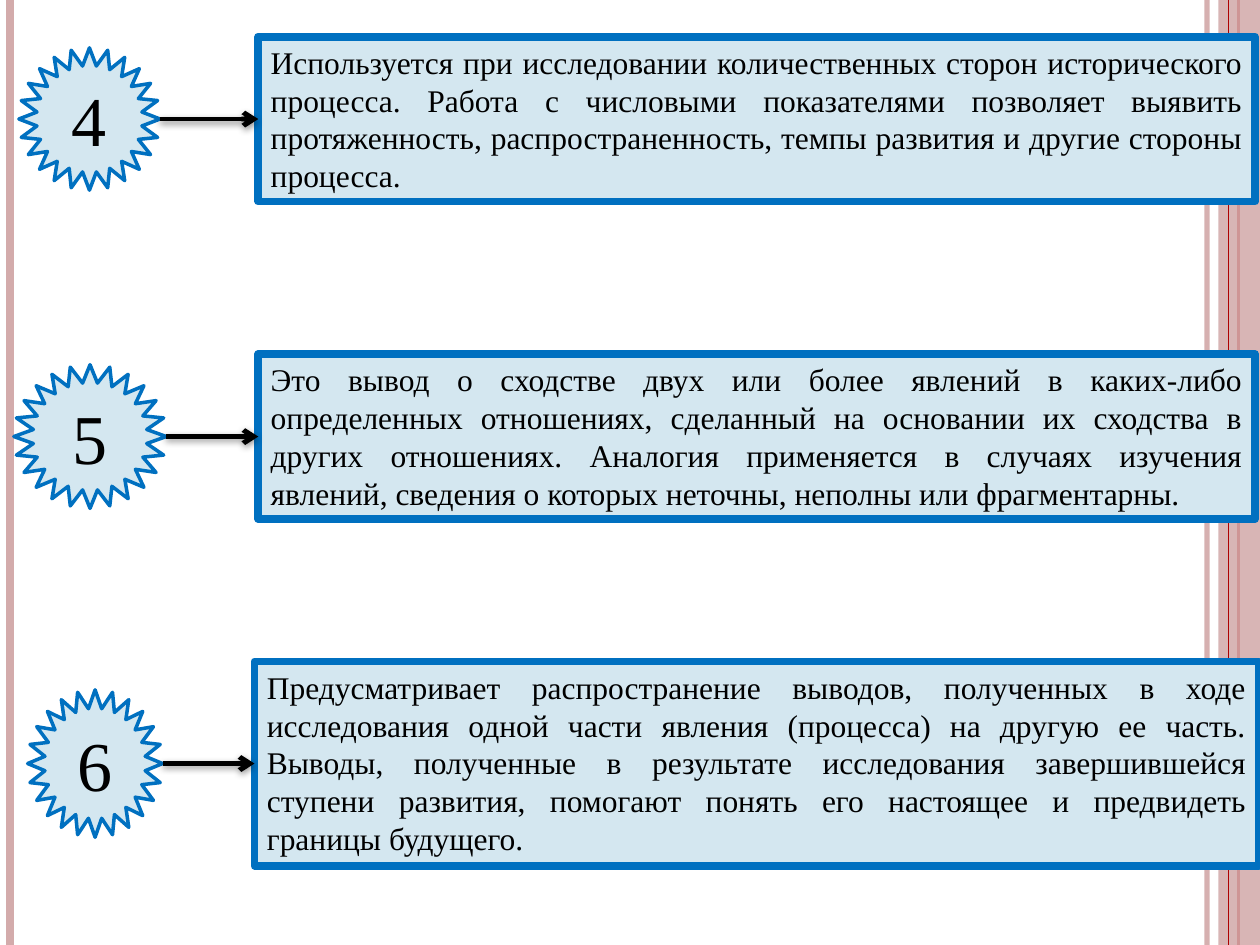
from lxml.etree import SubElement
from pptx import Presentation
from pptx.dml.color import RGBColor
from pptx.enum.shapes import MSO_CONNECTOR as Connector, MSO_SHAPE as Preset
from pptx.enum.text import MSO_ANCHOR as Anchor, PP_ALIGN as Align
from pptx.oxml.ns import qn
from pptx.util import Inches, Pt

# The slide is a grid of square cells
COLUMNS, ROWS = 100, 75
CELL = Inches(0.1)

FONT = "Times New Roman"
BLACK, PALE, BLUE = "000000", "D4E7F0", "0070C0"
PINK, RED = "D3ABAB", "AD0101"

# Number, box (left, top, width, height), star (left, width, height), text
METHODS = [
    ("4", (20.5, 2.9, 79.1, 13.1), (1.5, 11.2, 11.3),
     "Используется при исследовании количественных сторон исторического "
     "процесса. Работа с числовыми показателями позволяет выявить "
     "протяженность, распространенность, темпы развития и другие стороны "
     "процесса."),
    ("5", (20.5, 28.1, 79.1, 13.1), (1.1, 12.1, 11.4),
     "Это вывод о сходстве двух или более явлений в каких-либо "
     "определенных отношениях, сделанный на основании их сходства в "
     "других отношениях. Аналогия применяется в случаях изучения "
     "явлений, сведения о которых неточны, неполны или фрагментарны."),
    ("6", (20.2, 52.5, 79.7, 16.2), (2.2, 10.7, 11.7),
     "Предусматривает распространение выводов, полученных в ходе "
     "исследования одной части явления (процесса) на другую ее часть. "
     "Выводы, полученные в результате исследования завершившейся "
     "ступени развития, помогают понять его настоящее и предвидеть "
     "границы будущего."),
]


def cells(*counts):
    return [round(count * CELL) for count in counts]


def color(value):
    return RGBColor.from_string(value)


def set_opacity(parent, percent):
    """Make the solid fill found under parent partly transparent."""
    tone = parent.find(".//" + qn("a:srgbClr"))
    SubElement(tone, qn("a:alpha"), val=str(percent * 1000))


def add_block(page, preset, place, fill, line=None, width=0):
    block = page.shapes.add_shape(preset, *cells(*place))
    block.shadow.inherit = False
    block.fill.solid()
    block.fill.fore_color.rgb = color(fill)
    if line:
        block.line.color.rgb = color(line)
        block.line.width = Pt(width)
    else:
        block.line.fill.background()
    return block


def add_text(block, text, size, align, anchor):
    frame = block.text_frame
    frame.word_wrap = True
    frame.vertical_anchor = anchor
    para = frame.paragraphs[0]
    para.alignment = align
    span = para.add_run()
    span.text = text
    span.font.name = FONT
    span.font.size = Pt(size)
    span.font.color.rgb = color(BLACK)


def add_line(page, start, end, tone, width):
    """Draw a straight line; return it with its empty effect list."""
    line = page.shapes.add_connector(
        Connector.STRAIGHT, *cells(*start, *end))
    line.line.color.rgb = color(tone)
    line.line.width = Pt(width)
    properties = line._element.spPr
    return line, SubElement(properties, qn("a:effectLst"))


def add_stripe(page, column, tone, width):
    return add_line(page, (column, 0), (column, ROWS), tone, width)[0]


def add_arrow(page, start, box):
    """Point from start to the middle of the box's left side."""
    arrow, effects = add_line(page, start, start, BLACK, 2.75)
    arrow.end_connect(box, 1)
    SubElement(arrow.line._get_or_add_ln(), qn("a:tailEnd"), type="arrow")
    shadow = SubElement(
        effects, qn("a:outerShdw"), blurRad=str(Pt(4)), dist=str(Pt(1.6)),
        dir=str(90 * 60000), rotWithShape="0")
    tone = SubElement(shadow, qn("a:srgbClr"), val=BLACK)
    SubElement(tone, qn("a:alpha"), val="42000")


def add_background(page):
    stripe = add_stripe(page, 95.8, PINK, 3)
    set_opacity(stripe._element.spPr, 93)
    add_stripe(page, 0.8, PINK, 4.5)
    add_stripe(page, 98.3, RED, 1.5)
    band = add_block(page, Preset.RECTANGLE, (96.7, 0, 3.3, ROWS), PINK)
    set_opacity(band._element.spPr, 87)
    add_stripe(page, 97.5, RED, 0.75)


def add_method(page, number, box_place, star_size, text):
    _, top, _, height = box_place
    middle = top + height / 2
    box = add_block(page, Preset.RECTANGLE, box_place, PALE, BLUE, 4.5)
    add_text(box, text, 18, Align.JUSTIFY, Anchor.TOP)

    # The star is centred on the middle of its box
    left, star_width, star_height = star_size
    place = (left, middle - star_height / 2, star_width, star_height)
    star = add_block(page, Preset.STAR_24_POINT, place, PALE, BLUE, 2)
    add_text(star, number, 40, Align.CENTER, Anchor.MIDDLE)

    add_arrow(page, (left + star_width, middle), box)


def main():
    deck = Presentation()
    deck.slide_width, deck.slide_height = cells(COLUMNS, ROWS)
    page = deck.slides.add_slide(deck.slide_layouts[6])
    add_background(page)
    for method in METHODS:
        add_method(page, *method)
    deck.save("out.pptx")


if __name__ == "__main__":
    main()
